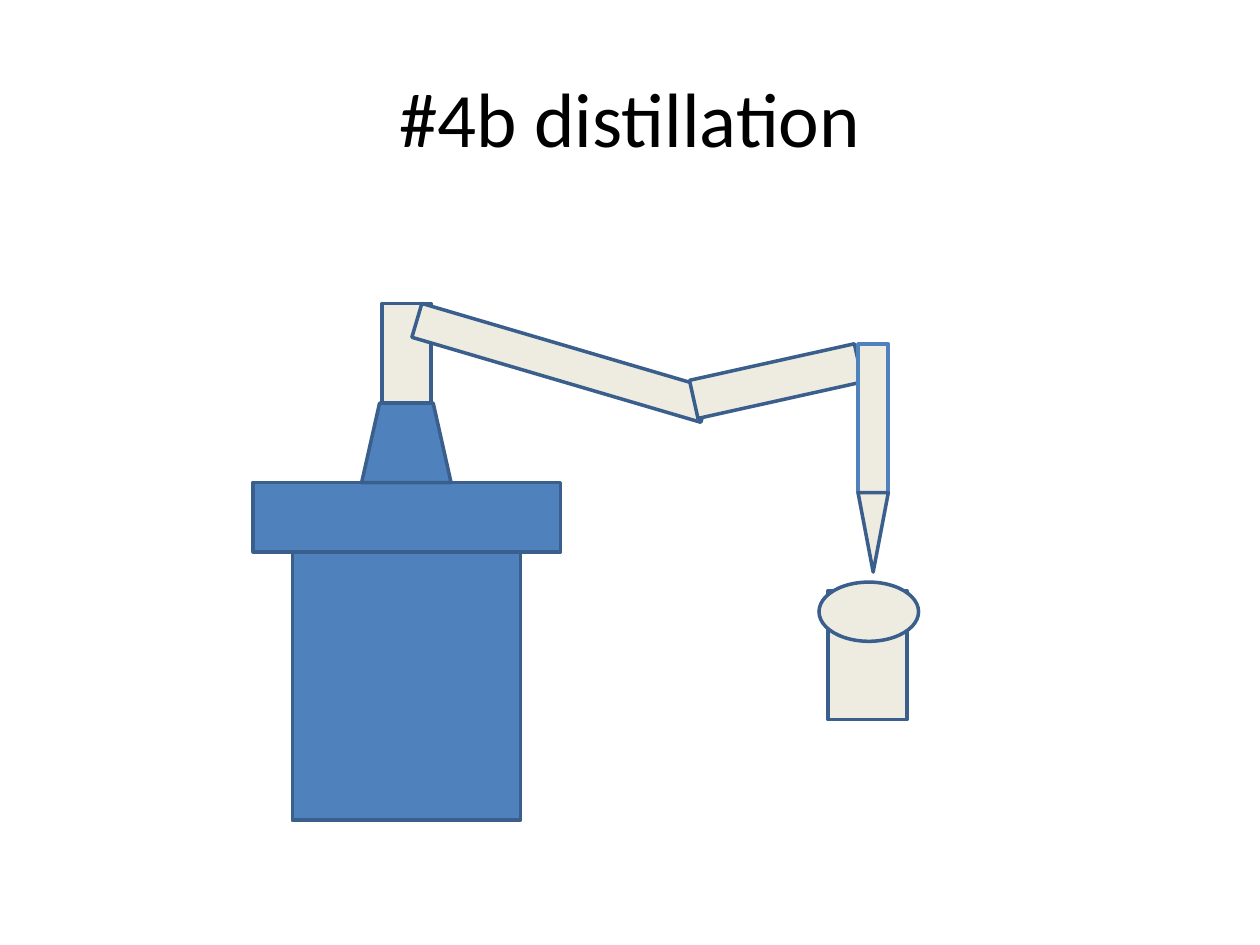
from dataclasses import dataclass

from pptx import Presentation
from pptx.dml.color import RGBColor
from pptx.enum.shapes import MSO_SHAPE
from pptx.enum.text import MSO_ANCHOR, PP_ALIGN
from pptx.slide import Slide
from pptx.util import Inches, Pt

BOX = MSO_SHAPE.FLOWCHART_PROCESS
FUNNEL = MSO_SHAPE.FLOWCHART_MANUAL_OPERATION
TRIANGLE = MSO_SHAPE.ISOSCELES_TRIANGLE
OVAL = MSO_SHAPE.OVAL
MIDDLE = MSO_ANCHOR.MIDDLE
CENTER = PP_ALIGN.CENTER

COLORS = {
    "blue": "4F81BD",
    "outline": "3A5F8C",
    "glass": "EEECE1",
    "text": "000000",
}


@dataclass
class Part:
    kind: MSO_SHAPE
    left: float
    top: float
    width: float
    height: float
    fill: str = "glass"
    line: str = "outline"
    rotation: float = 0


CUP = Part(BOX, 6.57, 4.69, 0.63, 1.02)
APPARATUS = [
    Part(BOX, 2.32, 4.38, 1.81, 2.13, "blue"),  # pot
    Part(BOX, 2.01, 3.83, 2.44, 0.55, "blue"),  # lid
    Part(FUNNEL, 2.87, 3.2, 0.71, 0.63, "blue", rotation=180),  # neck
    Part(BOX, 3.03, 2.41, 0.39, 0.79),  # riser
    Part(BOX, 3.26, 2.74, 2.39, 0.28, rotation=16.4),  # falling pipe
    Part(BOX, 5.49, 2.87, 1.34, 0.31, rotation=-12.5),  # rising pipe
    Part(BOX, 6.81, 2.73, 0.24, 1.18, line="blue"),  # outlet
    Part(TRIANGLE, 6.81, 3.91, 0.24, 0.63, rotation=180),  # drip tip
    Part(OVAL, 6.5, 4.62, 0.79, 0.47),  # cup rim
]


def rgb(name: str) -> RGBColor:
    return RGBColor.from_string(COLORS[name])


def add_part(s: Slide, part: Part) -> None:
    sp = s.shapes.add_shape(
        part.kind, Inches(part.left), Inches(part.top),
        Inches(part.width), Inches(part.height),
    )
    sp.rotation = part.rotation
    sp.shadow.inherit = False
    sp.fill.solid()
    sp.fill.fore_color.rgb = rgb(part.fill)
    sp.line.color.rgb = rgb(part.line)
    sp.line.width = Pt(2)


def add_title(s: Slide, text: str) -> None:
    sp = s.shapes.add_textbox(Inches(0.5), Inches(0.3), Inches(9), Inches(1.25))
    tf = sp.text_frame
    tf.word_wrap = True
    tf.vertical_anchor = MIDDLE
    p = tf.paragraphs[0]
    p.text = text
    p.alignment = CENTER
    p.font.name = "Calibri"
    p.font.size = Pt(44)
    p.font.color.rgb = rgb("text")


def main() -> None:
    prs = Presentation()
    prs.slide_width, prs.slide_height = Inches(10), Inches(7.5)
    s = prs.slides.add_slide(prs.slide_layouts[6])
    add_part(s, CUP)
    add_title(s, "#4b distillation")
    for part in APPARATUS:
        add_part(s, part)
    prs.save("out.pptx")


if __name__ == "__main__":
    main()
